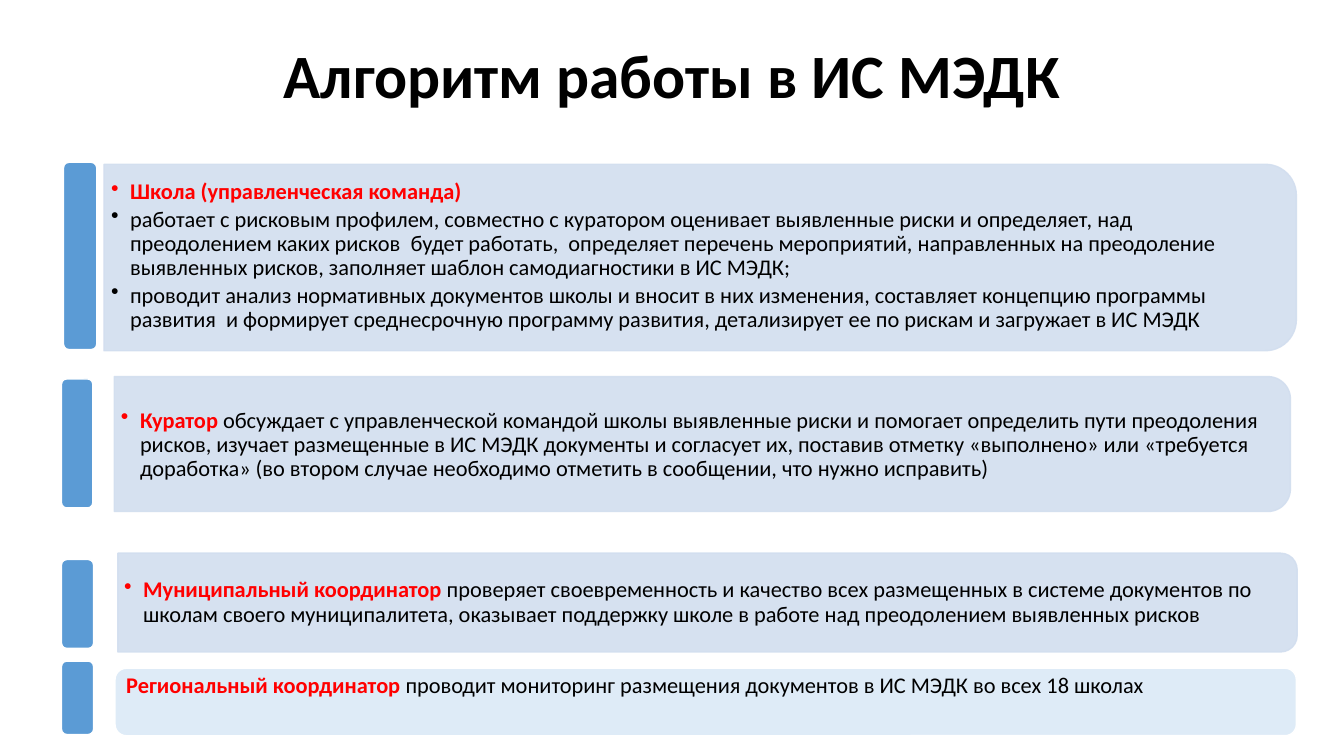
from lxml.etree import SubElement
from pptx import Presentation
from pptx.dml.color import RGBColor
from pptx.enum.shapes import MSO_SHAPE as Preset
from pptx.enum.text import MSO_ANCHOR as Anchor, PP_ALIGN as Align
from pptx.oxml.ns import qn
from pptx.util import Cm, Pt

COLORS = {
    "panel": "D2DEEF",
    "pale": "DEEBF7",
    "bar": "5B9BD5",
    "edge": "FFFFFF",
    "role": "FF0000",
    "text": "000000",
}
ROLE = {"name": "Calibri", "size": Pt(16), "bold": True}
DUTY = {**ROLE, "bold": False}
HEADING = {"name": "Calibri", "size": Pt(44), "bold": True}
FRAME = {
    "word_wrap": True,
    "margin_left": Cm(0.18),
    "margin_right": Cm(0.18),
    "margin_top": Cm(0.08),
    "margin_bottom": Cm(0.08),
}
INDENT = Cm(0.48)

STEPS = [
    {
        "bar": (1.6, 4.09, 0.84, 4.72),
        "panel": (2.62, 4.14, 30.05, 4.7),
        "text": (2.62, 4.34, 29.82, 4.24),
        "items": [
            ("Школа (управленческая команда)", ""),
            ("", "работает с рисковым профилем, совместно с куратором оценивает "
                 "выявленные риски и определяет, над преодолением каких рисков  "
                 "будет работать,  определяет перечень мероприятий, направленных "
                 "на преодоление выявленных рисков, заполняет шаблон "
                 "самодиагностики в ИС МЭДК;"),
            ("", "проводит анализ нормативных документов школы и вносит в них "
                 "изменения, составляет концепцию программы развития  и формирует "
                 "среднесрочную программу развития, детализирует ее по рискам "
                 "и загружает в ИС МЭДК"),
        ],
    },
    {
        "bar": (1.55, 9.55, 0.79, 3.25),
        "panel": (2.88, 9.49, 29.64, 3.4),
        "text": (2.87, 9.68, 29.49, 3.07),
        "items": [
            ("Куратор ", "обсуждает с управленческой командой школы выявленные риски "
                         "и помогает определить пути преодоления рисков, изучает "
                         "размещенные в ИС МЭДК документы и согласует их, поставив "
                         "отметку «выполнено» или «требуется доработка» (во втором "
                         "случае необходимо отметить в сообщении, что нужно исправить)"),
        ],
    },
    {
        "bar": (1.55, 14.1, 0.81, 2.24),
        "panel": (2.97, 13.94, 29.72, 2.49),
        "text": (2.95, 14.07, 29.59, 2.24),
        "items": [
            ("Муниципальный координатор ",
             "проверяет своевременность и качество всех размещенных в системе "
             "документов по школам своего муниципалитета, оказывает поддержку "
             "школе в работе над преодолением выявленных рисков"),
        ],
    },
]
REGION = {
    "bar": (1.55, 16.66, 0.81, 1.85),
    "panel": (2.9, 16.84, 29.77, 1.7),
    "text": (3, 16.92, 29.59, 1.52),
    "items": [
        ("Региональный координатор ",
         "проводит мониторинг размещения документов в ИС МЭДК во всех 18 школах"),
    ],
}


def apply(target, values):
    for name, value in values.items():
        setattr(target, name, value)


def add_span(para, text, color, style):
    span = para.add_run()
    span.text = text
    apply(span.font, style)
    span.font.color.rgb = RGBColor.from_string(COLORS[color])


def add_block(page, preset, place, fill, edge):
    block = page.shapes.add_shape(preset, *map(Cm, place))
    block.shadow.inherit = False
    block.fill.solid()
    block.fill.fore_color.rgb = RGBColor.from_string(COLORS[fill])
    block.line.color.rgb = RGBColor.from_string(COLORS[edge])
    block.line.width = Pt(1)
    return block


def add_tab_panel(page, place):
    left, top, width, height = place
    shift = (width - height) / 2
    upright = (left + shift, top - shift, height, width)
    panel = add_block(page, Preset.ROUND_2_SAME_RECTANGLE, upright, "panel", "panel")
    panel.rotation = 90
    for color in panel.element.spPr.iter(qn("a:srgbClr")):
        SubElement(color, qn("a:alpha"), val="90000")


def add_bullet(para):
    props = para._p.get_or_add_pPr()
    props.set("marL", str(INDENT))
    props.set("indent", str(-INDENT))
    SubElement(props, qn("a:buChar"), char="•")


def add_duties(page, place, items, bulleted, anchor):
    box = page.shapes.add_textbox(*map(Cm, place))
    frame = box.text_frame
    apply(frame, {**FRAME, "vertical_anchor": anchor})
    for number, (role, duty) in enumerate(items):
        para = frame.add_paragraph() if number else frame.paragraphs[0]
        apply(para, {"line_spacing": 0.9, "space_after": Pt(2.4)})
        if bulleted:
            add_bullet(para)
        if role:
            add_span(para, role, "role", ROLE)
        if duty:
            add_span(para, duty, "text", DUTY)


def add_title(page, text):
    title = page.shapes.title
    apply(title, {"left": Cm(2.34), "top": Cm(0.56), "width": Cm(29.21), "height": Cm(2.82)})
    title.text_frame.vertical_anchor = Anchor.MIDDLE
    para = title.text_frame.paragraphs[0]
    apply(para, {"alignment": Align.CENTER, "line_spacing": 0.9})
    add_span(para, text, "text", HEADING)


def main():
    deck = Presentation()
    apply(deck, {"slide_width": Cm(33.87), "slide_height": Cm(19.05)})
    page = deck.slides.add_slide(deck.slide_layouts[5])
    add_title(page, "Алгоритм работы в ИС МЭДК")
    for step in STEPS:
        add_tab_panel(page, step["panel"])
        add_duties(page, step["text"], step["items"], True, Anchor.MIDDLE)
        add_block(page, Preset.ROUNDED_RECTANGLE, step["bar"], "bar", "edge")
    add_block(page, Preset.ROUNDED_RECTANGLE, REGION["bar"], "bar", "edge")
    add_block(page, Preset.ROUNDED_RECTANGLE, REGION["panel"], "pale", "edge")
    add_duties(page, REGION["text"], REGION["items"], False, Anchor.TOP)
    deck.save("out.pptx")


if __name__ == "__main__":
    main()
